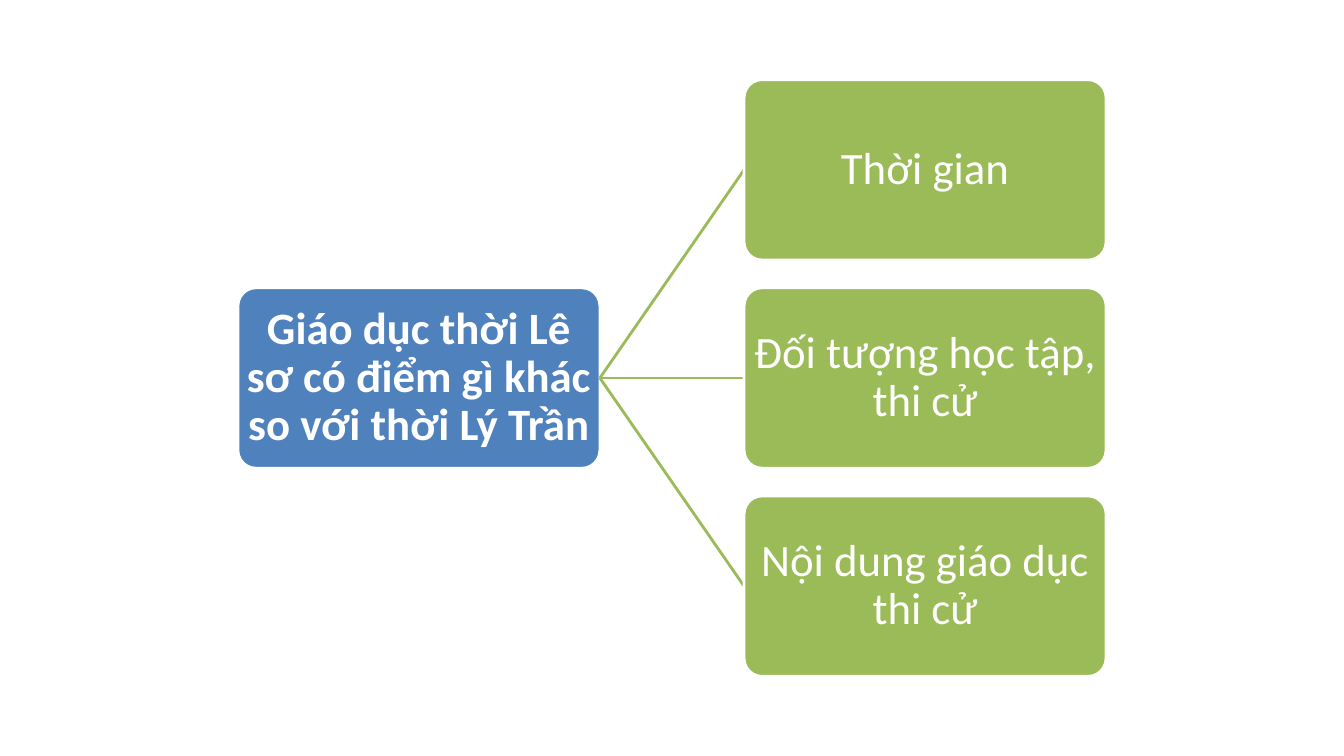
import pptx
import pptx.dml.color
import pptx.enum.shapes
import pptx.enum.text
import pptx.oxml.ns
import pptx.util
from pptx.util import Inches

BOX_WIDTH, BOX_HEIGHT = 3.59, 1.79
COLUMN_GAP, ROW_GAP = 1.43, 0.275
BLUE, GREEN, WHITE = "4F81BD", "9BBB59", "FFFFFF"
QUESTION = "Giáo dục thời Lê sơ có điểm gì khác so với thời Lý Trần"
BRANCHES = ["Thời gian", "Đối tượng học tập, thi cử", "Nội dung giáo dục thi cử"]


def color(hex_string):
    return pptx.dml.color.RGBColor.from_string(hex_string)


def set_attributes(target, values):
    for name, value in values.items():
        setattr(target, name, value)


def set_line(line, hex_string):
    line.color.rgb = color(hex_string)
    line.width = pptx.util.Pt(2)


def add_box(slide, left, top, text, fill, bold=False):
    shape = slide.shapes.add_shape(
        pptx.enum.shapes.MSO_SHAPE.ROUNDED_RECTANGLE,
        Inches(left), Inches(top), Inches(BOX_WIDTH), Inches(BOX_HEIGHT))
    shape.adjustments[0] = 0.1
    shape.shadow.inherit = False
    shape.fill.solid()
    shape.fill.fore_color.rgb = color(fill)
    set_line(shape.line, WHITE)

    frame = shape.text_frame
    margins = ("margin_left", "margin_right", "margin_top", "margin_bottom")
    set_attributes(frame, dict.fromkeys(margins, Inches(0.02)))
    set_attributes(frame, {
        "word_wrap": True,
        "vertical_anchor": pptx.enum.text.MSO_ANCHOR.MIDDLE,
    })
    paragraph = frame.paragraphs[0]
    set_attributes(paragraph, {
        "text": text,
        "alignment": pptx.enum.text.PP_ALIGN.CENTER,
        "line_spacing": 0.9,
    })
    font = paragraph.runs[0].font
    set_attributes(font, {"name": "Calibri", "size": pptx.util.Pt(32), "bold": bold})
    font.color.rgb = color(WHITE)
    return shape


def add_link(slide, start_x, start_y, end_x, end_y):
    connector = slide.shapes.add_connector(
        pptx.enum.shapes.MSO_CONNECTOR.STRAIGHT,
        Inches(start_x), Inches(start_y), Inches(end_x), Inches(end_y))
    set_line(connector.line, GREEN)
    properties = connector.element.find(pptx.oxml.ns.qn("p:spPr"))
    properties.append(pptx.oxml.parse_xml(
        f'<a:effectLst {pptx.oxml.ns.nsdecls("a")}/>'))


def add_tree(slide, left, top):
    """Place the question, centred on a column of branches to its right."""
    row_step = BOX_HEIGHT + ROW_GAP
    question_top = top + row_step * (len(BRANCHES) - 1) / 2
    link_left = left + BOX_WIDTH
    branch_left = link_left + COLUMN_GAP
    half_height = BOX_HEIGHT / 2

    add_box(slide, left, question_top, QUESTION, BLUE, bold=True)
    for row, text in enumerate(BRANCHES):
        branch_top = top + row * row_step
        add_link(slide, link_left, question_top + half_height,
                 branch_left, branch_top + half_height)
        add_box(slide, branch_left, branch_top, text, GREEN)


def main():
    presentation = pptx.Presentation()
    presentation.slide_width = Inches(13.33)
    presentation.slide_height = Inches(7.5)
    slide = presentation.slides.add_slide(presentation.slide_layouts[6])
    add_tree(slide, 2.36, 0.79)
    presentation.save("out.pptx")


if __name__ == "__main__":
    main()
